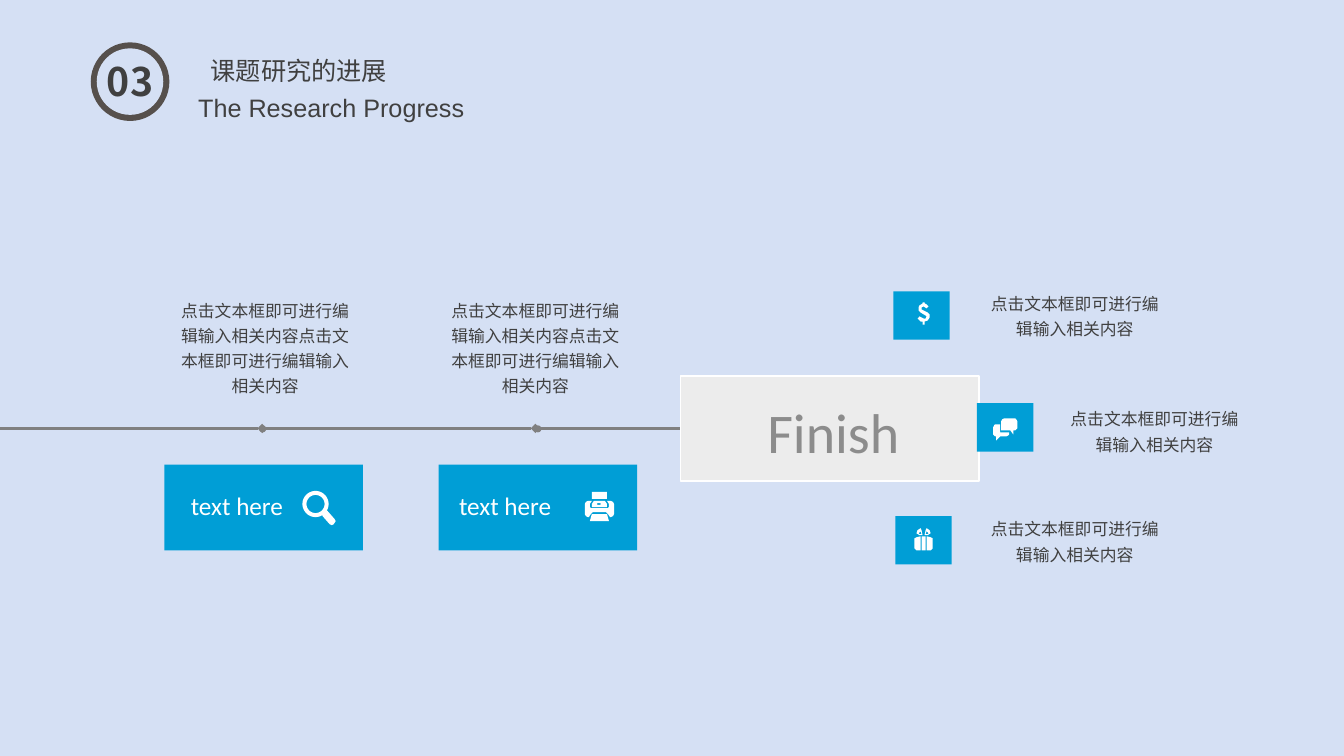
"""Build the research progress slide: a timeline, a finish panel and three options."""
import dataclasses
import math

import lxml.etree
import pptx
import pptx.dml.color
import pptx.enum.shapes
import pptx.enum.text
import pptx.oxml.ns
import pptx.util

Inches = pptx.util.Inches
Shapes = pptx.enum.shapes.MSO_SHAPE
Align = pptx.enum.text.PP_ALIGN
Anchor = pptx.enum.text.MSO_ANCHOR
Points = list[tuple[float, float]]
Area = tuple[float, float, float, float]

BACKDROP, BLUE, WHITE = "D5E0F4", "009ED6", "FFFFFF"
INK, GREY, RING = "404040", "808080", "56504C"
CHINESE = "Noto Sans CJK SC"
HINT = "点击文本框即可进行编辑输入相关内容"
LINE_Y = 4.25


@dataclasses.dataclass
class Style:
    size: float
    font: str
    color: str = INK
    bold: bool = False
    spacing: float = 1.0
    align: Align = Align.CENTER
    anchor: Anchor = Anchor.TOP


@dataclasses.dataclass
class Milestone:
    dot_x: float
    panel_left: float
    caption_left: float
    hint_left: float
    icon: list[Points]


@dataclasses.dataclass
class Option:
    tile: tuple[float, float]
    hint: tuple[float, float]
    icon: list[Points]


HINT_STYLE = Style(12, CHINESE, spacing=1.25)
CAPTION_STYLE = Style(18, "Calibri", WHITE)


def arc(x: float, y: float, across: float, down: float, start: int = 0, end: int = 360) -> Points:
    angles = [math.radians(start + (end - start) * step / 32) for step in range(33)]
    return [(x + across * math.cos(angle), y + down * math.sin(angle)) for angle in angles]


def rectangle(left: float, top: float, right: float, bottom: float) -> Points:
    return [(left, top), (right, top), (right, bottom), (left, bottom)]


def mirror(points: Points, axis: float) -> Points:
    return [(2 * axis - x, y) for x, y in points]


MAGNIFIER = [
    arc(3.13, 5.0, 0.13, 0.13, 58, 390)
    + [(3.25, 5.07), (3.32, 5.15), (3.33, 5.17), (3.31, 5.2), (3.29, 5.21), (3.27, 5.2), (3.2, 5.12)],
    arc(3.13, 5.0, 0.09, 0.09),
]
PRINTER = [
    rectangle(5.87, 4.88, 6.02, 4.95),
    [(5.87, 5.1), (6.02, 5.1), (6.04, 5.17), (5.85, 5.17)],
    [(5.87, 5), (5.87, 5.03), (6.02, 5.03), (6.02, 5), (6, 4.97), (5.89, 4.97)],
    arc(5.94, 5, 0.02, 0.01),
    [(5.83, 4.97), (5.87, 4.97), (5.85, 5), (5.85, 5.03), (5.86, 5.04), (6.03, 5.04),
     (6.04, 5.03), (6.04, 5), (6.02, 4.97), (6.06, 4.97), (6.08, 4.98), (6.09, 5),
     (6.09, 5.1), (6.08, 5.12), (6.06, 5.13), (6.05, 5.13), (6.03, 5.1), (6.01, 5.08),
     (5.88, 5.08), (5.86, 5.1), (5.84, 5.13), (5.83, 5.13), (5.81, 5.12), (5.8, 5.1),
     (5.8, 5), (5.81, 4.98)],
]
DOLLAR = [
    [(9.21, 3.04), (9.19, 3.06), (9.16, 3.04), (9.14, 3.05), (9.14, 3.07), (9.16, 3.08),
     (9.2, 3.1), (9.22, 3.12), (9.22, 3.15), (9.2, 3.18), (9.17, 3.19), (9.17, 3.22),
     (9.15, 3.22), (9.15, 3.19), (9.13, 3.19), (9.1, 3.16), (9.12, 3.14), (9.16, 3.16),
     (9.18, 3.16), (9.19, 3.14), (9.18, 3.13), (9.13, 3.1), (9.11, 3.08), (9.11, 3.05),
     (9.12, 3.03), (9.15, 3.01), (9.15, 3), (9.17, 3), (9.17, 3.01), (9.19, 3.02)],
]
CHAT = [
    [(9.96, 4.15), (10.07, 4.15), (10.08, 4.16), (10.09, 4.18), (10.09, 4.25), (10.08, 4.26),
     (10.07, 4.27), (10.05, 4.27), (10.05, 4.31), (10.02, 4.27), (9.93, 4.27), (9.93, 4.18), (9.94, 4.16)],
    [(9.92, 4.29), (9.92, 4.21), (9.87, 4.21), (9.86, 4.22), (9.85, 4.24), (9.85, 4.31),
     (9.86, 4.32), (9.87, 4.33), (9.88, 4.33), (9.88, 4.37), (9.92, 4.33), (9.98, 4.33),
     (10, 4.32), (10.01, 4.31), (10.01, 4.29)],
]
GIFT_AXIS = 9.16
GIFT_HALF = [
    [(9.07, 5.34), (9.09, 5.33), (9.13, 5.32), (9.13, 5.46), (9.09, 5.46), (9.07, 5.44)],
    [(9.13, 5.24), (9.1, 5.26), (9.09, 5.29), (9.12, 5.31), (9.15, 5.31), (9.14, 5.26)],
    [(9.13, 5.27), (9.14, 5.3), (9.12, 5.3), (9.11, 5.29)],
]
GIFT = [rectangle(9.14, 5.32, 9.18, 5.46), *GIFT_HALF, *(mirror(part, GIFT_AXIS) for part in GIFT_HALF)]

MILESTONES = [
    Milestone(2.6, 1.63, 1.69, 1.67, MAGNIFIER),
    Milestone(5.33, 4.35, 4.35, 4.35, PRINTER),
]
OPTIONS = [
    Option((8.86, 2.89), (9.7, 2.81), DOLLAR),
    Option((9.69, 4.0), (10.49, 3.96), CHAT),
    Option((8.88, 5.12), (9.7, 5.05), GIFT),
]


def rgb(color: str) -> pptx.dml.color.RGBColor:
    return pptx.dml.color.RGBColor.from_string(color)


def paint(shape, fill: str, outline: str = "", width: float = 0) -> None:
    shape.shadow.inherit = False
    shape.fill.solid()
    shape.fill.fore_color.rgb = rgb(fill)
    if outline:
        shape.line.color.rgb = rgb(outline)
        shape.line.width = pptx.util.Pt(width)
    else:
        shape.line.fill.background()


def draw_shape(page, kind: Shapes, area: Area, fill: str, outline: str = "", width: float = 0) -> None:
    paint(page.shapes.add_shape(kind, *map(Inches, area)), fill, outline, width)


def draw_icon(page, contours: list[Points]) -> None:
    outlines = [[(Inches(x), Inches(y)) for x, y in contour] for contour in contours]
    builder = page.shapes.build_freeform(*outlines[0][0])
    for outline in outlines:
        builder.move_to(*outline[0])
        builder.add_line_segments(outline[1:], close=True)
    paint(builder.convert_to_shape(), WHITE)


def draw_line(page, start: float, end: float) -> None:
    line = page.shapes.add_connector(
        pptx.enum.shapes.MSO_CONNECTOR.STRAIGHT, Inches(start), Inches(LINE_Y), Inches(end), Inches(LINE_Y))
    line.line.color.rgb = rgb(GREY)
    line.line.width = pptx.util.Pt(2.25)
    qualify = pptx.oxml.ns.qn
    lxml.etree.SubElement(line.line._get_or_add_ln(), qualify("a:tailEnd"), type="diamond")
    lxml.etree.SubElement(line._element.spPr, qualify("a:effectLst"))


def write(box, text: str, style: Style, wrap: bool = True) -> None:
    frame = box.text_frame
    frame.word_wrap = wrap
    frame.auto_size = pptx.enum.text.MSO_AUTO_SIZE.NONE
    frame.vertical_anchor = style.anchor
    para = frame.paragraphs[0]
    para.alignment = style.align
    para.line_spacing = style.spacing
    span = para.add_run()
    span.text = text
    span.font.size = pptx.util.Pt(style.size)
    span.font.name = style.font
    span.font.bold = style.bold
    span.font.color.rgb = rgb(style.color)
    lxml.etree.SubElement(span.font._element, pptx.oxml.ns.qn("a:ea"), typeface=style.font)


def draw_text(page, area: Area, text: str, style: Style) -> None:
    write(page.shapes.add_textbox(*map(Inches, area)), text, style)


def draw_heading(page) -> None:
    draw_shape(page, Shapes.OVAL, (0.9, 0.42, 0.78, 0.78), RING)
    draw_shape(page, Shapes.OVAL, (0.96, 0.48, 0.66, 0.66), BACKDROP)
    draw_text(page, (0.93, 0.52, 0.72, 0.57), "03", Style(28, CHINESE, bold=True))
    title = page.shapes.title
    title.left, title.top, title.width, title.height = map(Inches, (1.99, 0.2, 1.97, 0.71))
    write(title, "课题研究的进展", Style(18, CHINESE, spacing=2.0, align=Align.LEFT), wrap=False)
    draw_text(page, (0.54, 0.87, 5.49, 0.4), "The Research Progress", Style(18, "Arial"))


def main() -> None:
    deck = pptx.Presentation()
    deck.slide_width, deck.slide_height = Inches(13.33), Inches(7.5)
    page = deck.slides.add_slide(deck.slide_layouts[5])
    page.background.fill.solid()
    page.background.fill.fore_color.rgb = rgb(BACKDROP)
    draw_heading(page)
    for start, end in ((0, 2.6), (2.6, 5.31), (5.31, 8.06)):
        draw_line(page, start, end)
    for stone in MILESTONES:
        draw_shape(page, Shapes.OVAL, (stone.dot_x - 0.03, LINE_Y - 0.03, 0.07, 0.07), GREY)
        draw_shape(page, Shapes.RECTANGLE, (stone.panel_left, 4.61, 1.97, 0.85), BLUE)
        draw_icon(page, stone.icon)
        draw_text(page, (stone.caption_left, 4.82, 1.32, 0.4), "text here", CAPTION_STYLE)
        draw_text(page, (stone.hint_left, 2.88, 1.92, 1.11), HINT * 2, HINT_STYLE)
    draw_shape(page, Shapes.RECTANGLE, (6.75, 3.73, 2.96, 1.04), "ECECEC", WHITE, 1.25)
    draw_text(page, (7.28, 4.05, 1.97, 0.45), "Finish", Style(40, "Calibri", "8C8C8C", anchor=Anchor.MIDDLE))
    for option in OPTIONS:
        draw_shape(page, Shapes.RECTANGLE, (*option.tile, 0.56, 0.48), BLUE)
        draw_icon(page, option.icon)
        draw_text(page, (*option.hint, 1.92, 0.61), HINT, HINT_STYLE)
    deck.save("out.pptx")


if __name__ == "__main__":
    main()
